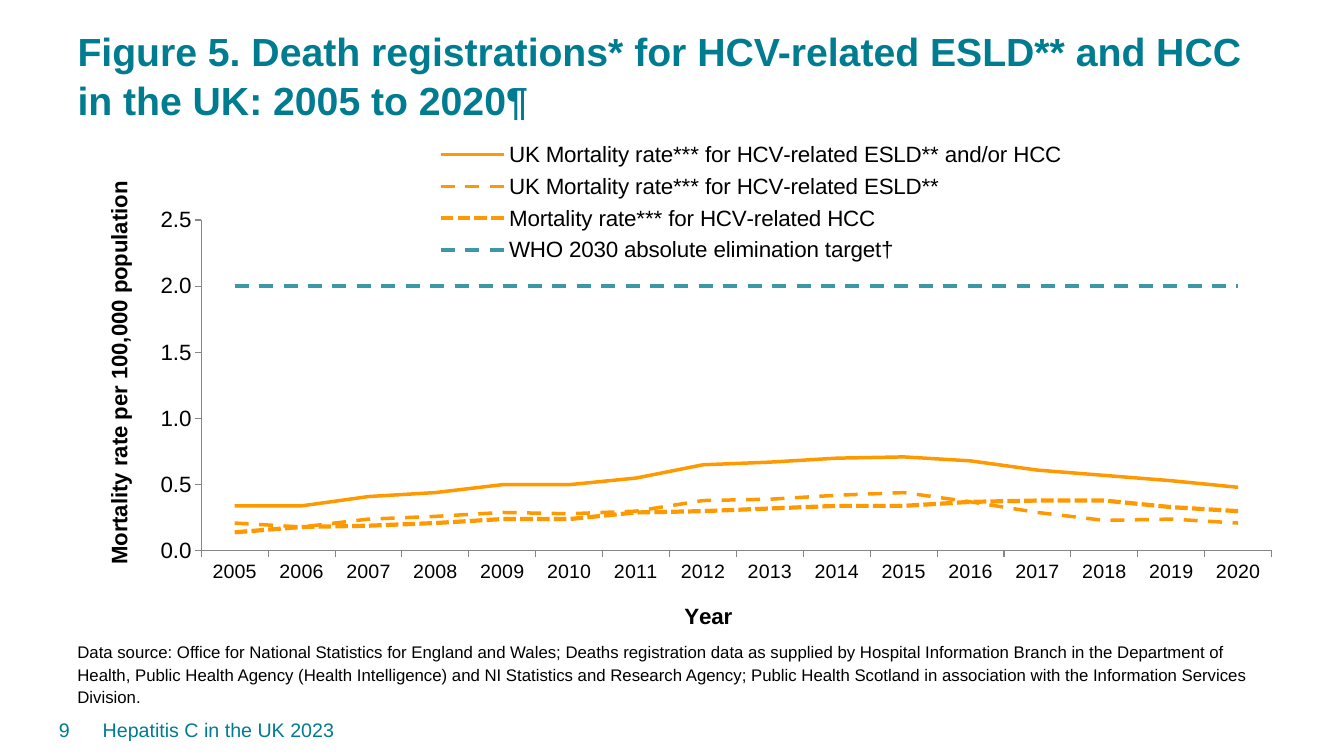
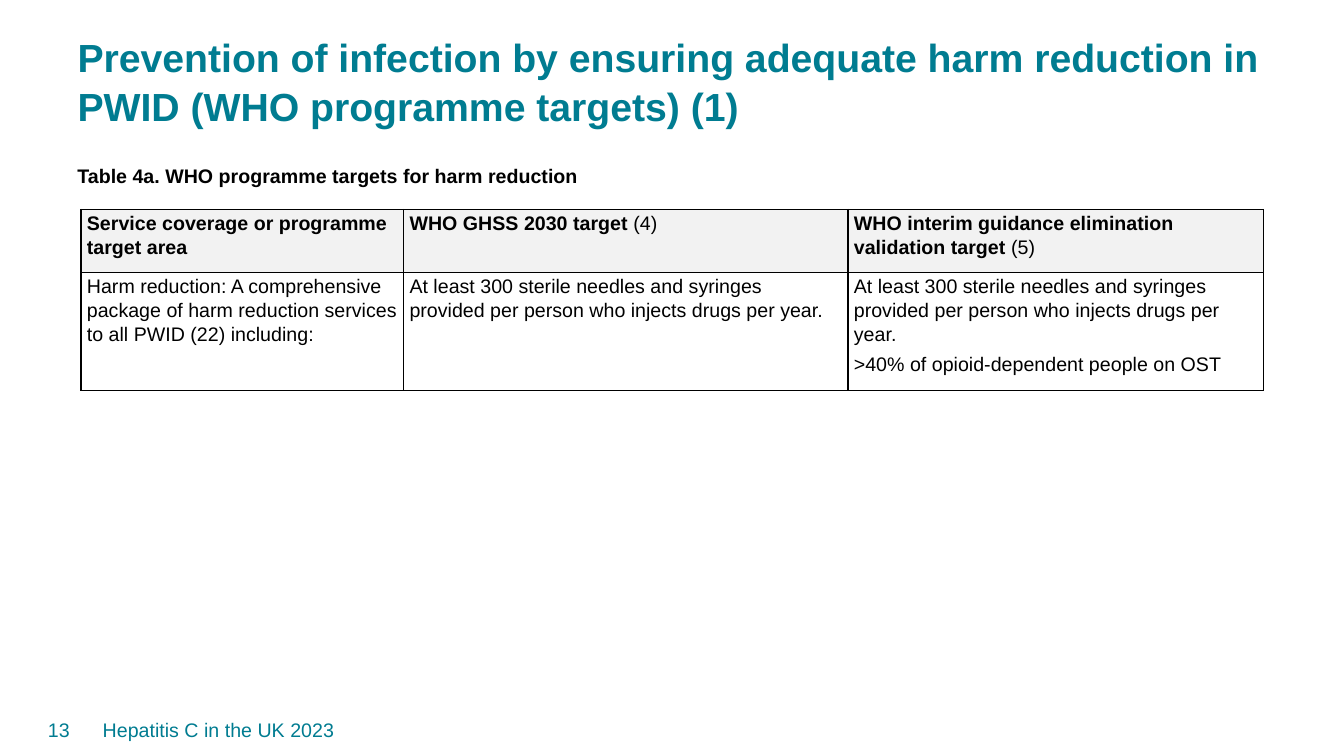
from dataclasses import dataclass

from lxml import etree
from pptx import Presentation
from pptx.chart.data import CategoryChartData
from pptx.dml.color import RGBColor
from pptx.enum.chart import XL_CHART_TYPE, XL_LEGEND_POSITION, XL_MARKER_STYLE, XL_TICK_MARK
from pptx.enum.dml import MSO_LINE
from pptx.enum.text import MSO_ANCHOR, MSO_AUTO_SIZE, PP_ALIGN
from pptx.oxml.ns import qn
from pptx.util import Cm, Pt

LINE = XL_CHART_TYPE.LINE
RIGHT = XL_LEGEND_POSITION.RIGHT
PLAIN = XL_MARKER_STYLE.NONE
TICK_OUT = XL_TICK_MARK.OUTSIDE
DASH, DOTS = MSO_LINE.DASH, MSO_LINE.SQUARE_DOT
TOP, MIDDLE = MSO_ANCHOR.TOP, MSO_ANCHOR.MIDDLE
NO_FIT = MSO_AUTO_SIZE.NONE
TO_LEFT, TO_RIGHT = PP_ALIGN.LEFT, PP_ALIGN.RIGHT


@dataclass(frozen=True)
class Theme:
    font: str = "Arial"
    teal: str = "007C91"
    aqua: str = "3C97A6"
    orange: str = "FF9900"
    black: str = "000000"
    white: str = "FFFFFF"
    pale: str = "F2F2F2"
    grey: str = "868686"
    title: int = 28
    label: int = 16
    body: int = 14
    note: int = 12


T = Theme()

YEARS = [str(year) for year in range(2005, 2021)]
RATES = [
    ("UK Mortality rate*** for HCV-related ESLD** and/or HCC",
     [0.34, 0.34, 0.41, 0.44, 0.5, 0.5, 0.55, 0.65,
      0.67, 0.7, 0.71, 0.68, 0.61, 0.57, 0.53, 0.48],
     T.orange, 2.5, None),
    ("UK Mortality rate*** for HCV-related ESLD**",
     [0.21, 0.18, 0.24, 0.26, 0.29, 0.28, 0.3, 0.38,
      0.39, 0.42, 0.44, 0.37, 0.29, 0.23, 0.24, 0.21],
     T.orange, 2.5, DASH),
    ("Mortality rate*** for HCV-related HCC",
     [0.14, 0.18, 0.19, 0.21, 0.24, 0.24, 0.29, 0.3,
      0.32, 0.34, 0.34, 0.37, 0.38, 0.38, 0.33, 0.3],
     T.orange, 3, DOTS),
    ("WHO 2030 absolute elimination target†", [2] * len(YEARS), T.aqua, 2.5, DASH),
]

SOURCE = (
    "Data source: Office for National Statistics for England and Wales; Deaths "
    "registration data as supplied by Hospital Information Branch in the Department of "
    "Health, Public Health Agency (Health Intelligence) and NI Statistics and Research "
    "Agency; Public Health Scotland in association with the Information Services Division."
)

NEEDLES = ("At least 300 sterile needles and syringes provided per person "
           "who injects drugs per year.")
TARGETS = [
    [
        [[("Service coverage or programme target area", True)]],
        [[("WHO GHSS 2030 target ", True), ("(4)", False)]],
        [[("WHO interim guidance elimination validation target ", True), ("(5)", False)]],
    ],
    [
        [[("Harm reduction: A comprehensive package of harm reduction services "
           "to all PWID (22) including:", False)]],
        [[(NEEDLES, False)]],
        [[(NEEDLES, False)], [(">40% of opioid-dependent people on OST", False)]],
    ],
]


def style(font, size, color=T.black, bold=False):
    font.name = T.font
    font.size = Pt(size)
    font.bold = bold
    font.color.rgb = RGBColor.from_string(color)


def add_run(para, text, size, color=T.black, bold=False):
    run = para.add_run()
    run.text = text
    style(run.font, size, color, bold)


def add_title(slide, text, top, height):
    shape = slide.shapes.title
    shape.left, shape.top = Cm(1.7), Cm(top)
    shape.width, shape.height = Cm(30.9), Cm(height)
    frame = shape.text_frame
    frame.word_wrap = True
    frame.auto_size = NO_FIT
    frame.vertical_anchor = TOP
    para = frame.paragraphs[0]
    para.alignment = TO_LEFT
    para.line_spacing = 1.05
    add_run(para, text, T.title, T.teal, True)


def add_text(slide, text, box, size, color=T.black, bold=False,
             anchor=TOP, align=TO_LEFT, pitch=None):
    frame = slide.shapes.add_textbox(*map(Cm, box)).text_frame
    frame.word_wrap = True
    frame.vertical_anchor = anchor
    para = frame.paragraphs[0]
    para.alignment = align
    if pitch:
        para.line_spacing = Pt(pitch)
    add_run(para, text, size, color, bold)


def add_footer(slide, number):
    top, height = 17.88, 1.02
    add_text(slide, "Hepatitis C in the UK 2023", (2.34, top, 27.8, height),
             T.body, T.teal, anchor=MIDDLE)
    add_text(slide, str(number), (0.36, top, 1.65, height),
             T.body, T.teal, anchor=MIDDLE, align=TO_RIGHT)


def new_slide(deck, number, title, top, height):
    slide = deck.slides.add_slide(deck.slide_layouts[5])
    add_title(slide, title, top, height)
    add_footer(slide, number)
    return slide


def place(part, inner=False, **sides):
    old = part.find(qn("c:layout"))
    if old is not None:
        part.remove(old)
    layout = etree.Element(qn("c:layout"))
    manual = etree.SubElement(layout, qn("c:manualLayout"))
    values = {"xMode": "edge", "yMode": "edge", **sides}
    if inner:
        values = {"layoutTarget": "inner", **values}
    for name, value in values.items():
        etree.SubElement(manual, qn("c:" + name)).set("val", str(value))
    overlay = part.find(qn("c:overlay"))
    if overlay is None:
        part.insert(0, layout)
    else:
        overlay.addprevious(layout)


def set_axis(axis, title, size, x, y):
    axis.has_major_gridlines = False
    axis.major_tick_mark = TICK_OUT
    axis.format.line.color.rgb = RGBColor.from_string(T.grey)
    axis.format.line.width = Pt(0.75)
    style(axis.tick_labels.font, size)
    axis.has_title = True
    frame = axis.axis_title.text_frame
    add_run(frame.paragraphs[0], title, T.label, bold=True)
    place(axis.axis_title._element, x=x, y=y)
    return frame


def add_rates(slide):
    data = CategoryChartData(number_format="0.00")
    data.categories = YEARS
    for name, values, *_ in RATES:
        data.add_series(name, values)
    box = map(Cm, (2.24, 2.74, 29.82, 13.26))
    chart = slide.shapes.add_chart(LINE, *box, data).chart
    chart.has_title = False
    style(chart.font, 10)
    plot = chart.plots[0]
    plot.vary_by_categories = False
    for line, (_, _, color, width, dash) in zip(plot.series, RATES):
        line.smooth = False
        line.marker.style = PLAIN
        line.format.line.color.rgb = RGBColor.from_string(color)
        line.format.line.width = Pt(width)
        if dash:
            line.format.line.dash_style = dash

    set_axis(chart.category_axis, "Year", T.body, 0.5, 0.94)
    axis = chart.value_axis
    axis.minimum_scale, axis.maximum_scale, axis.major_unit = 0, 2.5, 0.5
    axis.tick_labels.number_format = "0.0"
    axis.tick_labels.number_format_is_linked = False
    frame = set_axis(axis, "Mortality rate per 100,000 population", T.label, 0.01, 0.14)
    turn = frame._txBody.find(qn("a:bodyPr"))
    turn.set("rot", "-5400000")
    turn.set("vert", "horz")

    chart.has_legend = True
    key = chart.legend
    key.position = RIGHT
    key.include_in_layout = False
    style(key.font, T.label)
    place(key._element, x=0.28, y=0.05, w=0.56, h=0.26)
    area = chart._chartSpace.find(".//" + qn("c:plotArea"))
    place(area, inner=True, x=0.095, y=0.214, w=0.905, h=0.636)


def add_border(cell):
    props = cell._tc.get_or_add_tcPr()
    for spot, side in enumerate(("lnL", "lnR", "lnT", "lnB")):
        line = etree.Element(qn("a:" + side), w=str(Pt(1)))
        fill = etree.SubElement(line, qn("a:solidFill"))
        etree.SubElement(fill, qn("a:srgbClr")).set("val", T.black)
        props.insert(spot, line)


def fill_cell(cell, paras, color):
    cell.fill.solid()
    cell.fill.fore_color.rgb = RGBColor.from_string(color)
    cell.margin_left = cell.margin_right = Cm(0.15)
    cell.margin_top, cell.margin_bottom = Cm(0.03), Cm(0)
    frame = cell.text_frame
    for index, runs in enumerate(paras):
        para = frame.add_paragraph() if index else frame.paragraphs[0]
        para.line_spacing = 1.1
        para.space_before = Pt(2 if index else 0)
        para.space_after = Pt(2)
        for text, bold in runs:
            add_run(para, text, T.body, bold=bold)
    add_border(cell)


def add_targets(slide):
    widths, heights = (8.13, 11.2, 10.48), (1.58, 2.97)
    box = map(Cm, (2.04, 5.28, sum(widths), sum(heights)))
    table = slide.shapes.add_table(len(heights), len(widths), *box).table
    table.first_row = table.horz_banding = False
    for column, width in zip(table.columns, widths):
        column.width = Cm(width)
    for row, height, cells, color in zip(table.rows, heights, TARGETS, (T.pale, T.white)):
        row.height = Cm(height)
        for cell, paras in zip(row.cells, cells):
            fill_cell(cell, paras, color)


def main():
    deck = Presentation()
    deck.slide_width, deck.slide_height = Cm(33.87), Cm(19.05)

    slide = new_slide(deck, 9, "Figure 5. Death registrations* for HCV-related ESLD** "
                      "and HCC in the UK: 2005 to 2020¶", 0.5, 2.24)
    add_rates(slide)
    add_text(slide, SOURCE, (1.7, 16, 30.53, 1.93), T.note, pitch=16)

    slide = new_slide(deck, 13, "Prevention of infection by ensuring adequate harm "
                      "reduction in PWID (WHO programme targets) (1)", 0.65, 2.92)
    add_text(slide, "Table 4a. WHO programme targets for harm reduction",
             (1.7, 4.1, 15.2, 0.76), T.body, bold=True, pitch=14)
    add_targets(slide)

    deck.save("out.pptx")


if __name__ == "__main__":
    main()
